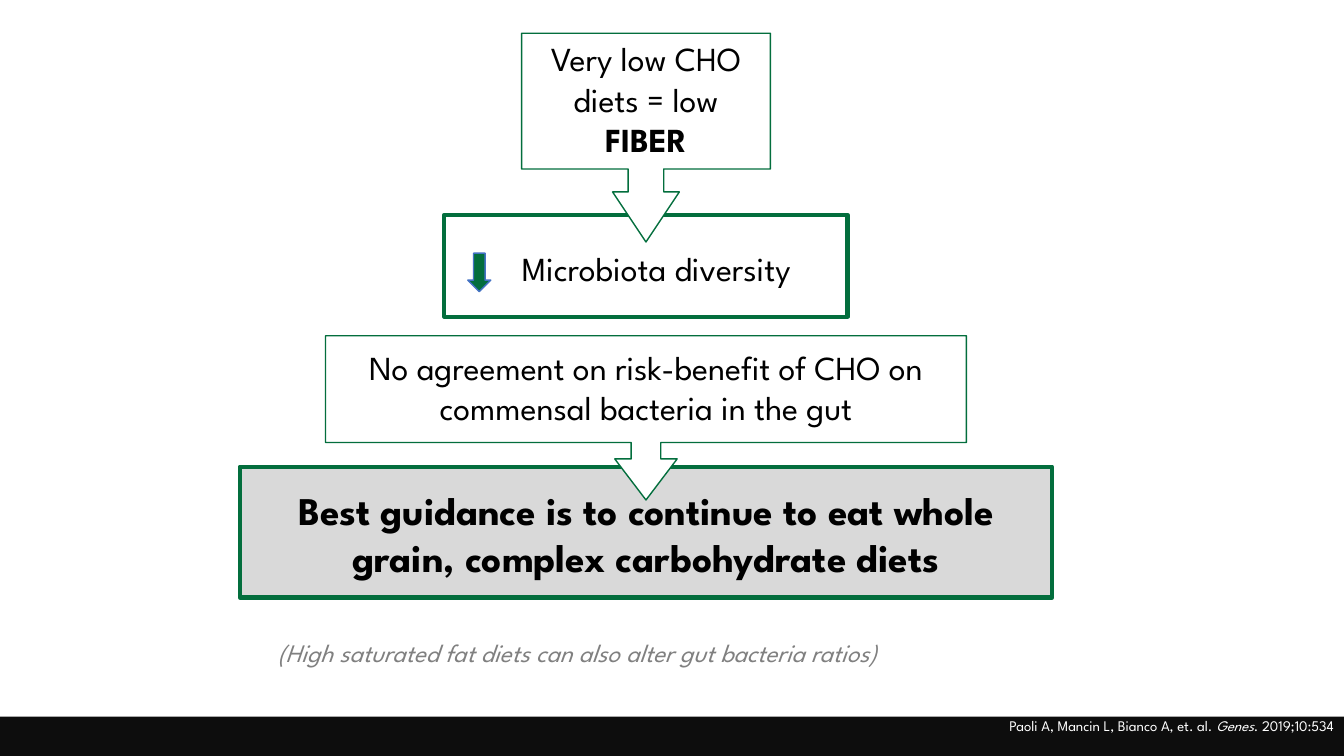
from dataclasses import dataclass
from pptx import Presentation
from pptx.dml.color import RGBColor
from pptx.enum.shapes import MSO_SHAPE
from pptx.enum.text import PP_ALIGN
from pptx.util import Cm, Pt

RECT = MSO_SHAPE.RECTANGLE
ARROW = MSO_SHAPE.DOWN_ARROW
CALLOUT = MSO_SHAPE.DOWN_ARROW_CALLOUT
LEFT, MID, RIGHT = PP_ALIGN.LEFT, PP_ALIGN.CENTER, PP_ALIGN.RIGHT


@dataclass(frozen=True)
class Theme:
    font: str = "League Spartan"
    green: str = "036E3D"
    blue: str = "4472C4"
    gray: str = "D9D9D9"
    dim: str = "808080"
    dark: str = "0D0D0D"
    black: str = "000000"
    white: str = "FFFFFF"
    lead: float = 28
    main: float = 24
    note: float = 18
    cite: float = 10.5
    thick: float = 3
    thin: float = 1


T = Theme()
WIDE, HIGH = 33.87, 19.05
AXIS = 16.28

# kind, (centre, top, width, height), fill, (line colour, weight), adjustments
SHAPES = [
    (RECT, (WIDE / 2, 18.06, WIDE, 0.99), T.dark, None, ()),
    (RECT, (AXIS, 11.76, 20.47, 3.3), T.gray, (T.green, T.thick), ()),
    (RECT, (AXIS, 5.41, 10.16, 2.57), None, (T.green, T.thick), ()),
    (ARROW, (12.08, 6.38, 0.58, 0.97), T.green, (T.blue, T.thin), ()),
    (CALLOUT, (AXIS, 0.84, 6.27, 5.26), T.white, (T.green, T.thin),
     (0.17, 0.16, 0.24, 0.65)),
    (CALLOUT, (AXIS, 8.46, 16.15, 4.14), T.white, (T.green, T.thin),
     (0.18, 0.19, 0.25, 0.65)),
]

TEXTS = [
    ((16.54, 6.12, 10.67, 1.27), MID, T.main, T.black,
     [("Microbiota diversity", "")]),
    ((AXIS, 12.12, 20.24, 2.64), MID, T.lead, T.black,
     [("Best guidance is to continue to eat whole grain, "
       "complex carbohydrate diets", "b")]),
    ((AXIS, 0.84, 5.38, 3.33), MID, T.main, T.black,
     [("Very low CHO diets = low ", ""), ("FIBER", "b")]),
    ((AXIS, 8.61, 16.15, 2.31), MID, T.main, T.black,
     [("No agreement on risk-benefit of CHO on commensal bacteria "
       "in the gut", "")]),
    ((AXIS, 15.93, 19.05, 1.02), LEFT, T.note, T.dim,
     [("(High saturated fat diets can also alter gut bacteria ratios)", "i")]),
    ((19.16, 17.93, 29.41, 0.69), RIGHT, T.cite, T.white,
     [("Paoli A, Mancin L, Bianco A, et. al. ", ""), ("Genes", "i"),
      (". 2019;10:534", "")]),
]


def place(box):
    mid, top, wide, high = box
    return Cm(mid - wide / 2), Cm(top), Cm(wide), Cm(high)


def add_form(slide, kind, box, fill, line, tweaks):
    form = slide.shapes.add_shape(kind, *place(box))
    form.shadow.inherit = False
    if fill:
        form.fill.solid()
        form.fill.fore_color.rgb = RGBColor.from_string(fill)
    else:
        form.fill.background()
    if line:
        color, weight = line
        form.line.color.rgb = RGBColor.from_string(color)
        form.line.width = Pt(weight)
    else:
        form.line.fill.background()
    for index, value in enumerate(tweaks):
        form.adjustments[index] = value


def add_text(slide, box, align, size, color, runs):
    frame = slide.shapes.add_textbox(*place(box)).text_frame
    frame.word_wrap = True
    para = frame.paragraphs[0]
    para.alignment = align
    para.font.name = T.font
    para.font.size = Pt(size)
    para.font.color.rgb = RGBColor.from_string(color)
    for words, style in runs:
        run = para.add_run()
        run.text = words
        run.font.name = T.font
        run.font.size = Pt(size)
        run.font.color.rgb = RGBColor.from_string(color)
        run.font.bold = style == "b"
        run.font.italic = style == "i"


def main():
    deck = Presentation()
    deck.slide_width, deck.slide_height = Cm(WIDE), Cm(HIGH)
    slide = deck.slides.add_slide(deck.slide_layouts[6])
    for item in SHAPES:
        add_form(slide, *item)
    for item in TEXTS:
        add_text(slide, *item)
    deck.save("out.pptx")


if __name__ == "__main__":
    main()
